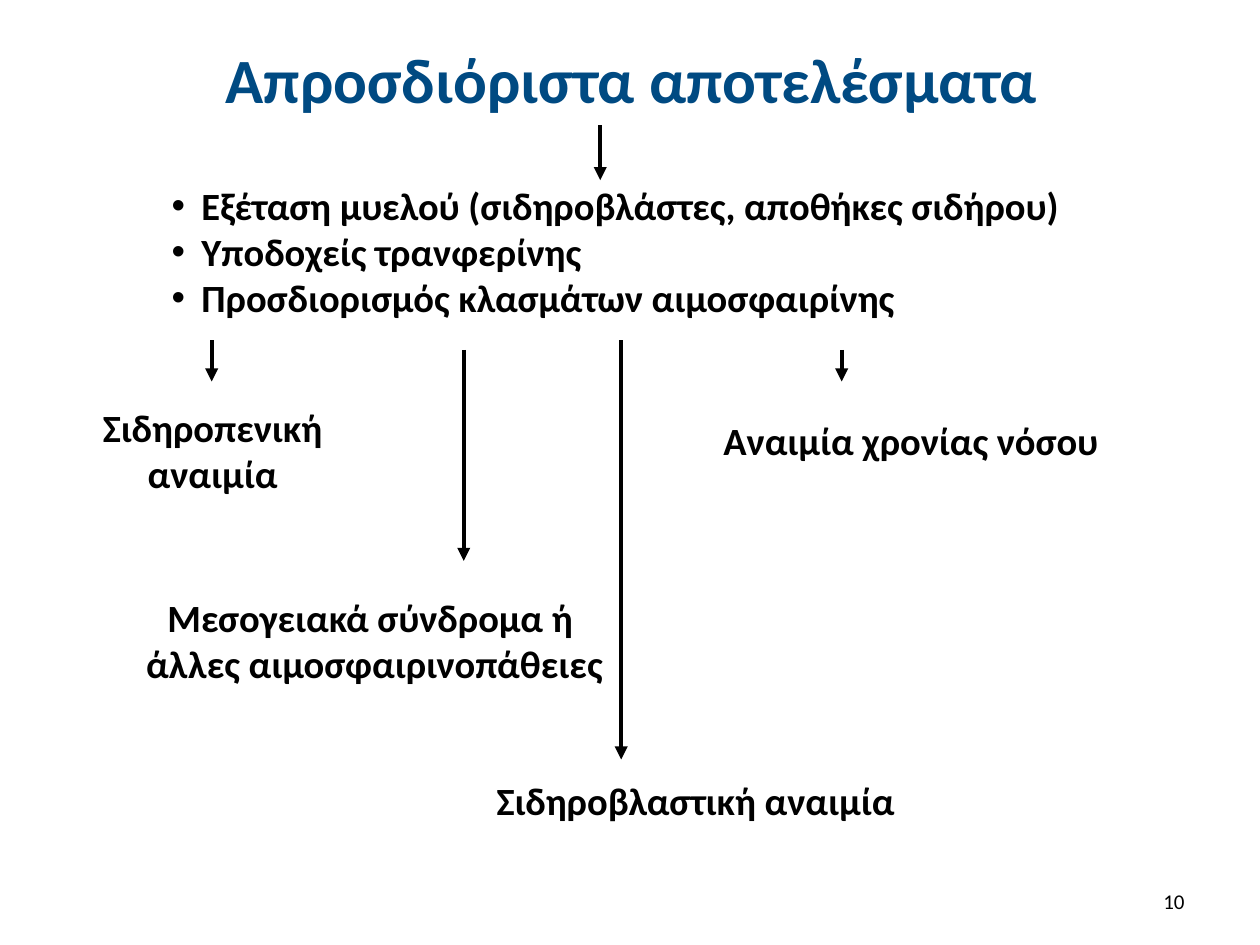
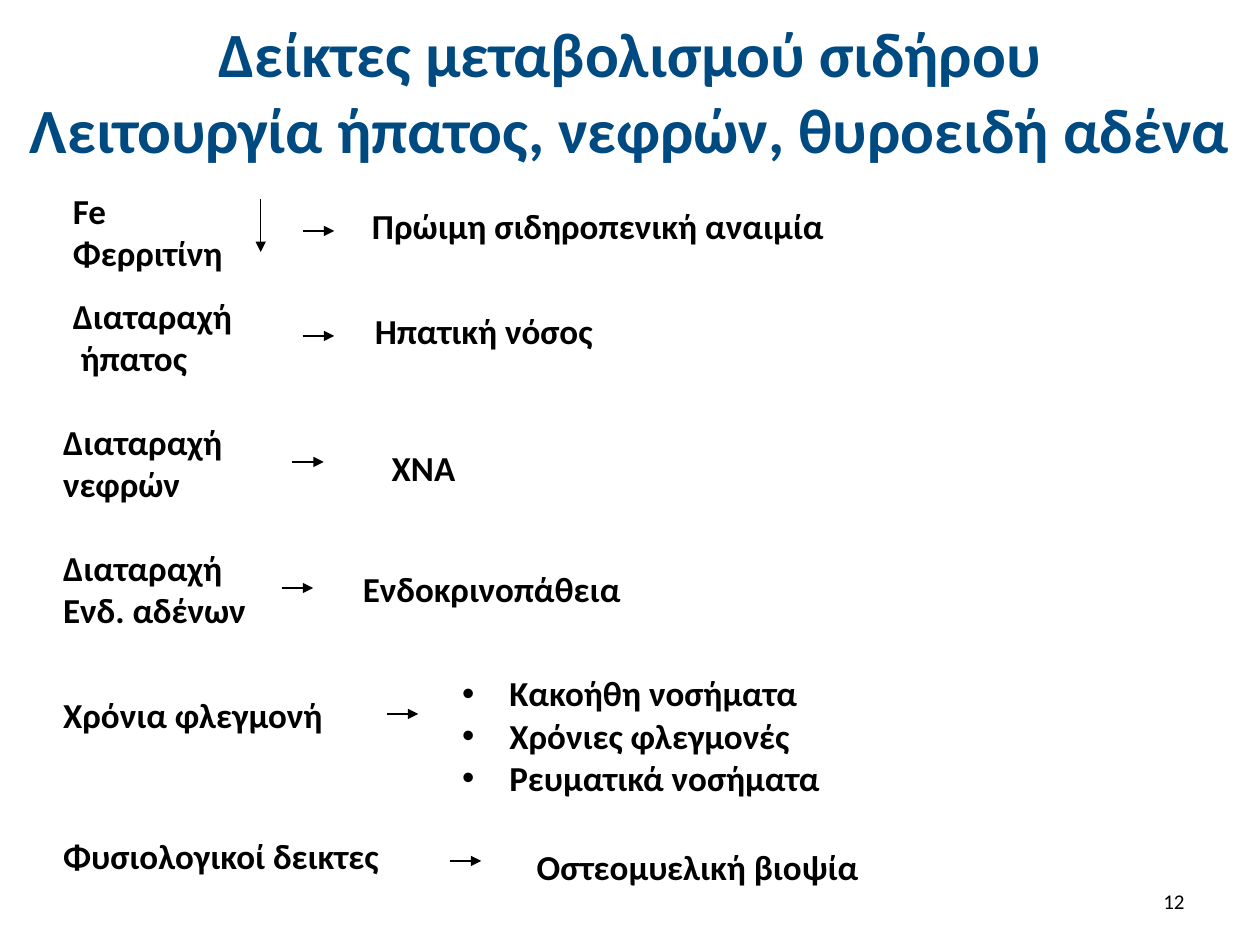
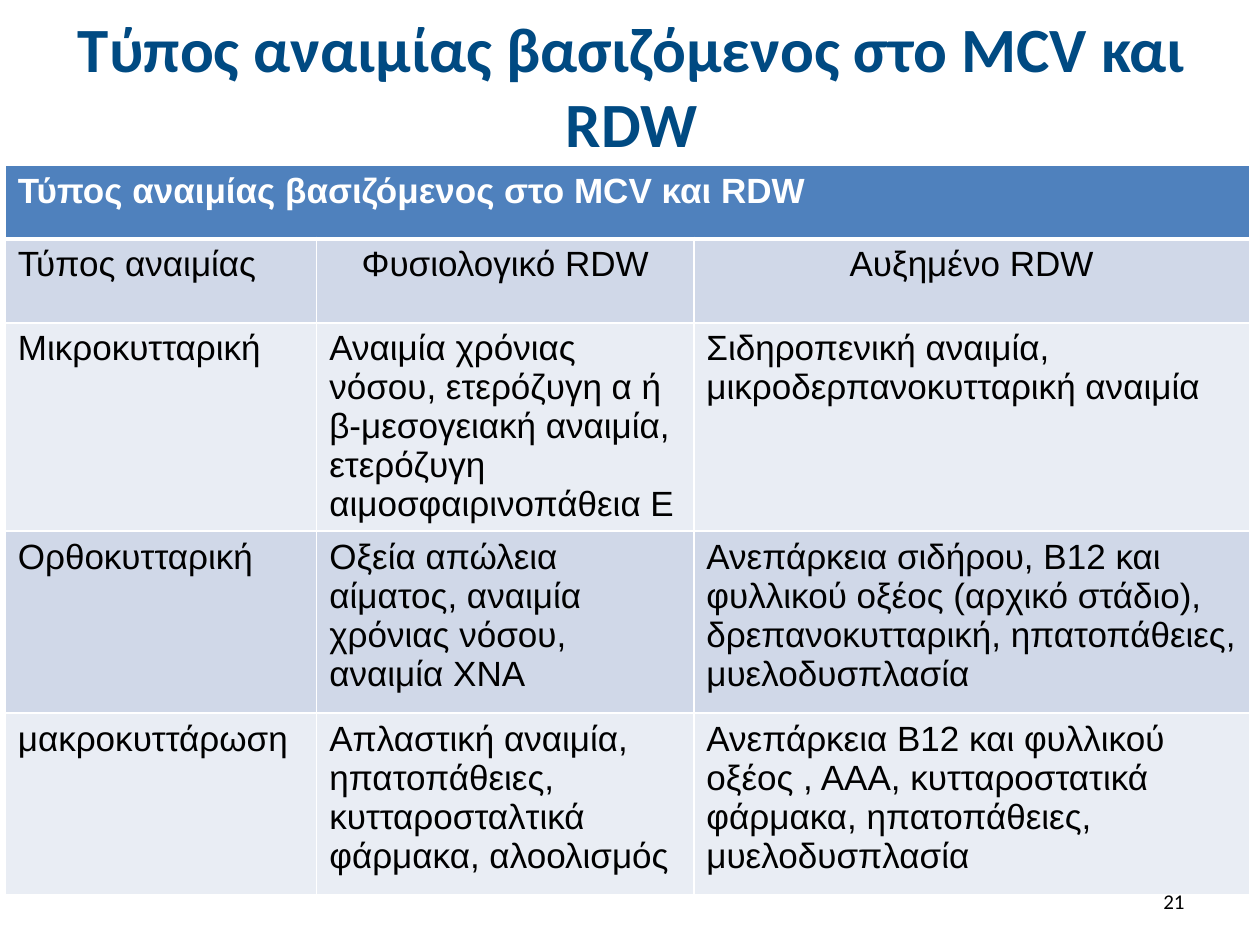
"""Build three slides on the diagnosis of anaemia: two arrow diagrams and a table."""
from lxml import etree
from pptx import Presentation
from pptx.dml.color import RGBColor
from pptx.enum import shapes, text
from pptx.oxml import ns
from pptx.util import Pt

BLACK, WHITE, NAVY = "000000", "FFFFFF", "004A82"
HEADER_BLUE, BAND_DARK, BAND_LIGHT = "4F81BD", "D0D8E8", "E9EDF4"
LEFT, CENTER, RIGHT = text.PP_ALIGN.LEFT, text.PP_ALIGN.CENTER, text.PP_ALIGN.RIGHT


def paint(target, color):
    """Give a font, a line or a fill one solid colour."""
    fill = target if hasattr(target, "solid") else target.fill
    fill.solid()
    fill.fore_color.rgb = RGBColor.from_string(color)


def write_text(frame, content, size=20, font="Calibri", color=BLACK, bold=False,
               align=LEFT, bullet_indent=0):
    """Fill a text frame, one paragraph for each line of the content."""
    frame.text = content
    for paragraph in frame.paragraphs:
        paragraph.alignment = align
        for run in paragraph.runs:
            run.font.name, run.font.size, run.font.bold = font, Pt(size), bold
            paint(run.font, color)
        if bullet_indent:
            properties = paragraph._p.get_or_add_pPr()
            properties.set("marL", str(Pt(bullet_indent)))
            properties.set("indent", str(-Pt(bullet_indent)))
            etree.SubElement(properties, ns.qn("a:buFont"), typeface="Arial")
            etree.SubElement(properties, ns.qn("a:buChar"), char="•")


presentation = Presentation()
presentation.slide_width, presentation.slide_height = Pt(720), Pt(540)
blank = presentation.slide_layouts[6]
slides = [presentation.slides.add_slide(blank) for _ in range(3)]

anaemia_rows = [
    ("Τύπος αναιμίας βασιζόμενος στο MCV και RDW", "", ""),
    ("Τύπος αναιμίας", "Φυσιολογικό RDW", "Αυξημένο RDW"),
    ("Μικροκυτταρική",
     "Αναιμία χρόνιας νόσου, ετερόζυγη α ή β-μεσογειακή αναιμία, ετερόζυγη αιμοσφαιρινοπάθεια Ε",
     "Σιδηροπενική αναιμία, μικροδερπανοκυτταρική αναιμία"),
    ("Ορθοκυτταρική", "Οξεία απώλεια αίματος, αναιμία χρόνιας νόσου, αναιμία ΧΝΑ",
     "Ανεπάρκεια σιδήρου, Β12 και φυλλικού οξέος (αρχικό στάδιο), δρεπανοκυτταρική, "
     "ηπατοπάθειες, μυελοδυσπλασία"),
    ("μακροκυττάρωση", "Απλαστική αναιμία, ηπατοπάθειες, κυτταροσταλτικά φάρμακα, αλοολισμός",
     "Ανεπάρκεια Β12 και φυλλικού οξέος , ΑΑΑ, κυτταροστατικά φάρμακα, ηπατοπάθειες, "
     "μυελοδυσπλασία"),
]
column_widths = [178, 215.5, 317.5]
row_heights = [42, 48, 119, 104, 104]
table = slides[2].shapes.add_table(
    len(row_heights), len(column_widths), Pt(3), Pt(94.5),
    Pt(sum(column_widths)), Pt(sum(row_heights))).table
for column, width in zip(table.columns, column_widths):
    column.width = Pt(width)
for row, height in zip(table.rows, row_heights):
    row.height = Pt(height)
table.cell(0, 0).merge(table.cell(0, 2))

for row_index, contents in enumerate(anaemia_rows):
    header = row_index == 0
    band = HEADER_BLUE if header else BAND_DARK if row_index % 2 else BAND_LIGHT
    for column_index, content in enumerate(contents):
        cell = table.cell(row_index, column_index)
        if not cell.is_spanned:
            write_text(cell.text_frame, content, font="Arial", bold=header,
                       color=WHITE if header else BLACK,
                       align=CENTER if row_index == 1 and column_index else LEFT)
        properties = cell._tc.get_or_add_tcPr()
        for side in "LRTB":
            thick = (row_index, side) in [(0, "B"), (1, "T")]
            border = etree.SubElement(properties, ns.qn(f"a:ln{side}"), w=str(Pt(3 if thick else 1)))
            solid = etree.SubElement(border, ns.qn("a:solidFill"))
            etree.SubElement(solid, ns.qn("a:srgbClr"), val=WHITE)
        paint(cell.fill, band)

findings = [
    (91, 104.5, 550, 78, LEFT, 17, "Εξέταση μυελού (σιδηροβλάστες, αποθήκες σιδήρου)\n"
     "Υποδοχείς τρανφερίνης\nΠροσδιορισμός κλασμάτων αιμοσφαιρίνης"),
    (253, 436, 294, 42, CENTER, 0, "Σιδηροβλαστική αναιμία "),
    (64, 333, 300, 66, CENTER, 0, "Μεσογειακά σύνδρομα ή \nάλλες αιμοσφαιρινοπάθειες"),
    (37, 236, 174, 42, CENTER, 0, "Σιδηροπενική \nαναιμία "),
    (378.5, 230.5, 294, 42, CENTER, 0, "Αναιμία χρονίας νόσου  "),
]
finding_arrows = [(x, top, x, bottom) for x, top, bottom in [
    (343, 71.5, 103), (121, 194.5, 218), (265, 200, 320.5), (355, 194.5, 434), (481, 200, 218)]]

indicators = [
    (34.5, 108, 126, 48, LEFT, 0, "Fe\nΦερριτίνη"),
    (197, 108, 294, 42, CENTER, 0, "Πρώιμη σιδηροπενική αναιμία "),
    (34.5, 168, 126, 48, LEFT, 0, "Διαταραχή\n ήπατος"),
    (203, 168, 156, 42, CENTER, 0, "Ηπατική νόσος  "),
    (29, 234, 126, 60, LEFT, 0, "Διαταραχή\nνεφρών"),
    (197, 246, 90, 42, CENTER, 0, "ΧΝΑ"),
    (29, 306, 126, 60, LEFT, 0, "Διαταραχή\nΕνδ. αδένων"),
    (197, 312, 168, 48, CENTER, 0, "Ενδοκρινοπάθεια"),
    (29, 378, 174, 60, LEFT, 0, "Χρόνια φλεγμονή"),
    (257, 384, 294, 72, LEFT, 27, "Κακοήθη νοσήματα\nΧρόνιες φλεγμονές\nΡευματικά νοσήματα"),
    (29, 456, 216, 66, LEFT, 0, "Φυσιολογικοί δεικτες"),
    (293, 474, 216, 42, CENTER, 0, "Οστεομυελική βιοψία "),
]
indicator_arrows = [(149, 114, 149, 144)] + [(x, y, x + 18, y) for x, y in [
    (173, 132), (173, 192), (167, 264), (161, 336), (221, 408), (257, 492)]]

slide_plans = [
    ("Απροσδιόριστα αποτελέσματα", (37, 9, 648, 71), "10", 22, findings, 2.5, finding_arrows),
    ("Δείκτες μεταβολισμού σιδήρου\vΛειτουργία ήπατος, νεφρών, θυροειδή αδένα",
     (0, 9, 720, 85), "12", 20, indicators, 0.75, indicator_arrows),
    ("Τύπος αναιμίας βασιζόμενος στο MCV και RDW", (37, 9, 648, 79), "21", 20, [], 1, []),
]

for slide, plan in zip(slides, slide_plans):
    title, title_place, number, size, labels, weight, arrows = plan
    boxes = [(title_place, True, title, dict(size=36, color=NAVY, bold=True, align=CENTER)),
             ((516, 500.5, 168, 29), True, number, dict(size=12, align=RIGHT))]
    for *place, align, indent, content in labels:
        boxes.append((place, False, content,
                      dict(size=size, bold=True, align=align, bullet_indent=indent)))
    for place, wrap, content, style in boxes:
        frame = slide.shapes.add_textbox(*map(Pt, place)).text_frame
        frame.word_wrap = wrap
        frame.vertical_anchor = text.MSO_ANCHOR.MIDDLE
        write_text(frame, content, **style)
    for ends in arrows:
        arrow = slide.shapes.add_connector(shapes.MSO_CONNECTOR.STRAIGHT, *map(Pt, ends))
        arrow.line.width = Pt(weight)
        paint(arrow.line, BLACK)
        etree.SubElement(arrow.line._get_or_add_ln(), ns.qn("a:tailEnd"), type="triangle")
        etree.SubElement(arrow._element.spPr, ns.qn("a:effectLst"))

presentation.save("out.pptx")
